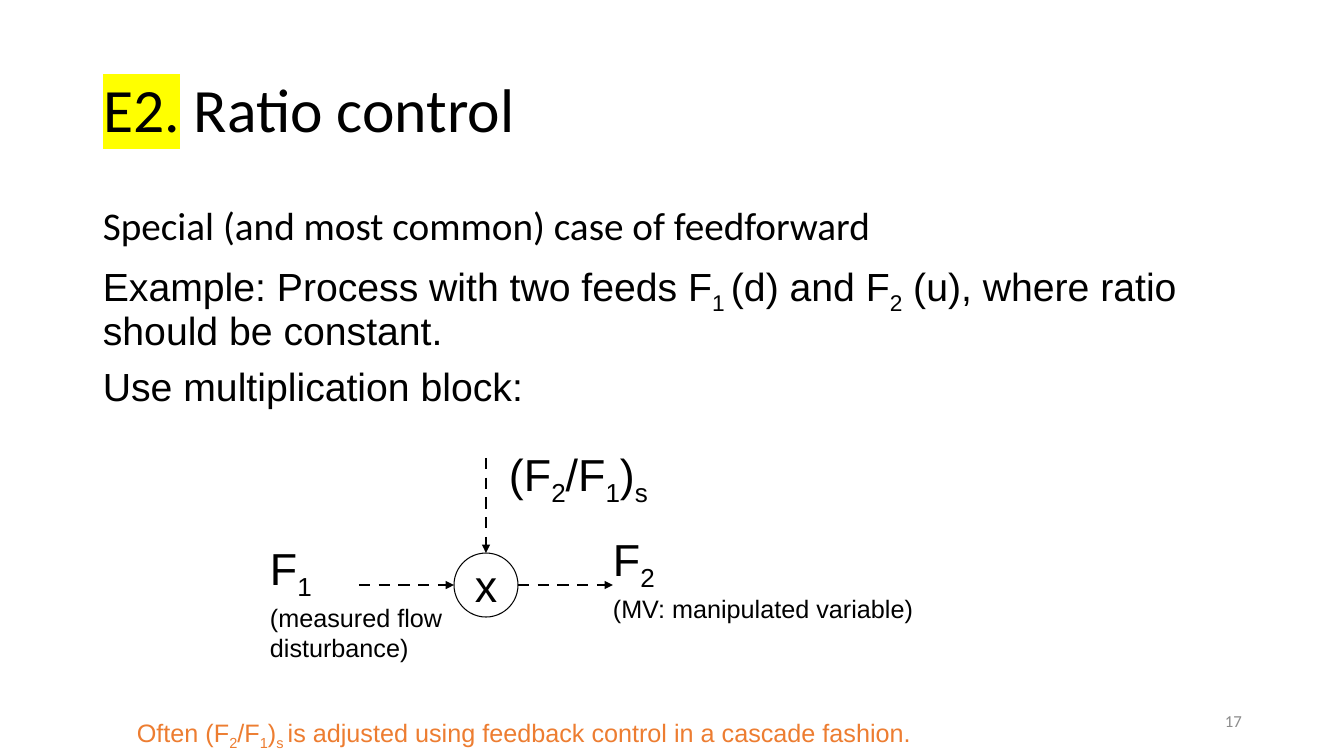
from pptx import Presentation
from pptx.dml.color import RGBColor
from pptx.enum.dml import MSO_LINE
from pptx.enum.shapes import MSO_CONNECTOR, MSO_SHAPE
from pptx.enum.text import MSO_ANCHOR as Anchor, MSO_AUTO_SIZE as AutoSize, PP_ALIGN as Align
from pptx.oxml.ns import qn
from pptx.util import Emu, Pt
from lxml.etree import SubElement

COLORS = {"ink": "000000", "mark": "FFFF00", "accent": "ED7D31", "muted": "8C8C8C"}
SUB = "~"

TITLE = ["E2.", " Ratio control"]
BODY = [
    ("Special (and most common) case of feedforward", 28, "Calibri"),
    ("Example: Process with two feeds F~1 ~(d) and F~2~ (u), where ratio should be constant.", 28, "Arial"),
    ("Use multiplication block:", 28, "Arial"),
]
LABELS = [
    ((499, 442, 166, 65), [("(F~2~/F~1~)~s", 32, "Arial")], "ink", False),
    ((260, 536, 215, 126), [("F~1", 32, "Arial"), ("(measured flow", 18, "Arial"),
                            ("disturbance)", 18, "Arial")], "ink", True),
    ((603, 527, 324, 131), [("F~2", 32, "Arial"), ("(MV: manipulated variable)", 18, "Arial")], "ink", False),
    ((127, 712, 803, 72), [("Often (F~2~/F~1~)~s ~is adjusted using feedback control in a cascade fashion.",
                            18, "Arial")], "accent", False),
]
PAGE_NUMBER = [("17", 12, "Calibri")]

CENTER_X, CENTER_Y, RADIUS, REACH = 486, 585, 32, 95


def px(length):
    return Emu(round(length * 914400 / 100.8))


def place(shape, left, top, width, height):
    shape.left, shape.top, shape.width, shape.height = map(px, (left, top, width, height))


def write(frame, paragraphs, color="ink", align=Align.LEFT, anchor=Anchor.TOP,
          wrap=True, grow=False, line_spacing=1.0, gap=0):
    frame.word_wrap = wrap
    frame.auto_size = AutoSize.SHAPE_TO_FIT_TEXT if grow else AutoSize.NONE
    frame.vertical_anchor = anchor
    for index, (text, size, font) in enumerate(paragraphs):
        para = frame.add_paragraph() if index else frame.paragraphs[0]
        para.alignment = align
        para.line_spacing = line_spacing
        para.space_before = Pt(gap if index else 0)
        for part, piece in enumerate(text.split(SUB)):
            if not piece:
                continue
            span = para.add_run()
            span.text = piece
            span.font.size = Pt(size)
            span.font.name = font
            span.font.color.rgb = RGBColor.from_string(COLORS[color])
            if part % 2:
                span.font._element.set("baseline", "-25000")


def highlight(span, color):
    properties = span.font._element
    mark = SubElement(properties, qn("a:highlight"))
    SubElement(mark, qn("a:srgbClr"), val=COLORS[color])
    properties.find(qn("a:latin")).addprevious(mark)


def add_text(page, bounds, paragraphs, **style):
    box = page.shapes.add_textbox(*map(px, bounds))
    write(box.text_frame, paragraphs, **style)
    place(box, *bounds)


def add_signal(page, start, end):
    signal = page.shapes.add_connector(MSO_CONNECTOR.STRAIGHT, *map(px, start + end))
    signal.line.color.rgb = RGBColor.from_string(COLORS["ink"])
    signal.line.width = Pt(2)
    signal.line.dash_style = MSO_LINE.DASH
    SubElement(signal.line._get_or_add_ln(), qn("a:tailEnd"), type="triangle")
    SubElement(signal._element.spPr, qn("a:effectLst"))


def add_multiplier(page):
    circle = page.shapes.add_shape(MSO_SHAPE.OVAL, px(CENTER_X - RADIUS), px(CENTER_Y - RADIUS),
                                   px(2 * RADIUS), px(2 * RADIUS))
    circle.shadow.inherit = False
    circle.fill.background()
    circle.line.color.rgb = RGBColor.from_string(COLORS["ink"])
    circle.line.width = Pt(0.75)
    write(circle.text_frame, [("x", 32, "Arial")], align=Align.CENTER, anchor=Anchor.MIDDLE, wrap=False)


def main():
    deck = Presentation()
    deck.slide_width, deck.slide_height = px(1344), px(756)
    page = deck.slides.add_slide(deck.slide_layouts[5])

    title = page.shapes.title
    place(title, 93, 40, 1159, 146)
    write(title.text_frame, [("".join(TITLE), 44, "Calibri")], anchor=Anchor.MIDDLE, line_spacing=0.9)
    para = title.text_frame.paragraphs[0]
    number = para.runs[0]
    number.text = TITLE[0]
    rest = para.add_run()
    rest.text = TITLE[1]
    rest.font.size, rest.font.name = number.font.size, number.font.name
    rest.font.color.rgb = number.font.color.rgb
    highlight(number, "mark")

    add_text(page, (93, 202, 1159, 480), BODY, line_spacing=0.9, gap=10)
    add_multiplier(page)
    left, right, top = CENTER_X - RADIUS, CENTER_X + RADIUS, CENTER_Y - RADIUS
    add_signal(page, (left - REACH, CENTER_Y), (left, CENTER_Y))
    add_signal(page, (right, CENTER_Y), (right + REACH, CENTER_Y))
    add_signal(page, (CENTER_X, top - REACH), (CENTER_X, top))
    for bounds, paragraphs, color, wrap in LABELS:
        add_text(page, bounds, paragraphs, color=color, wrap=wrap, grow=True)
    add_text(page, (950, 701, 302, 40), PAGE_NUMBER, color="muted", align=Align.RIGHT, anchor=Anchor.MIDDLE)
    deck.save("out.pptx")


if __name__ == "__main__":
    main()
